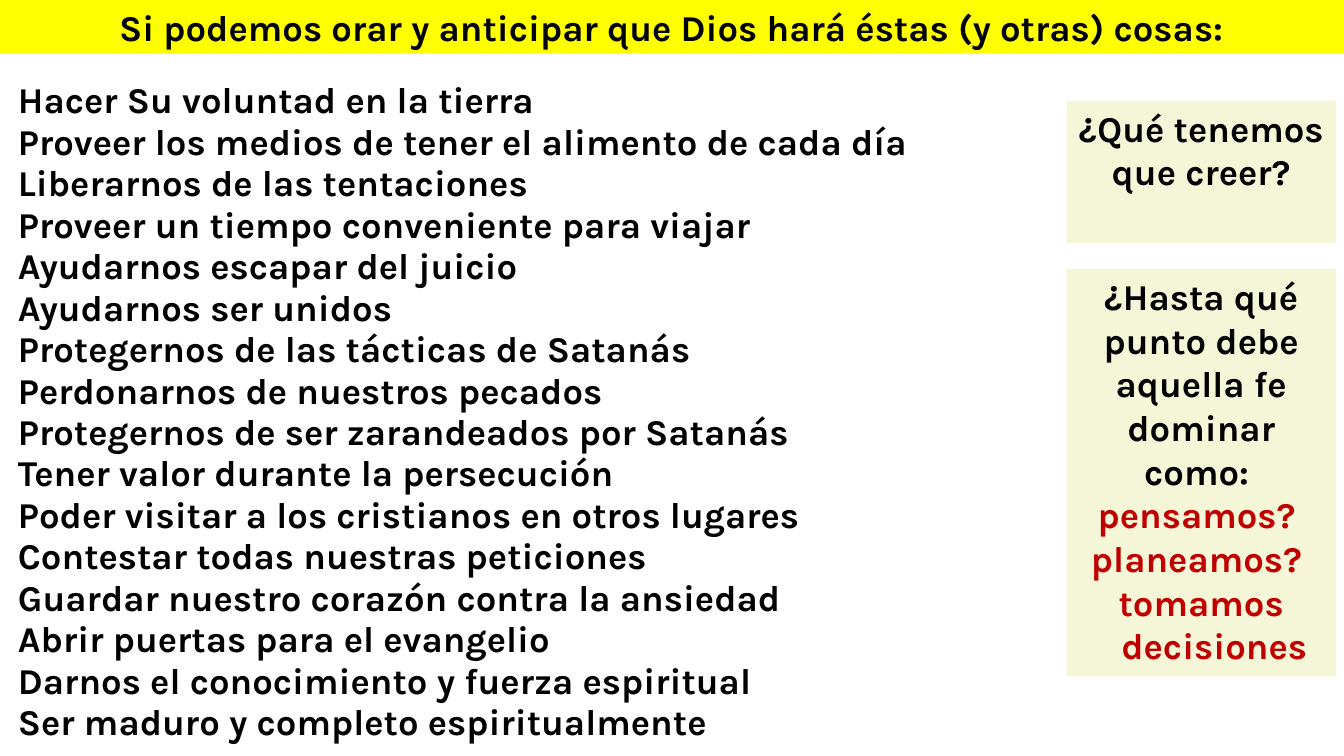
from dataclasses import dataclass
from typing import Optional

from pptx import Presentation
from pptx.dml.color import RGBColor
from pptx.enum.shapes import MSO_SHAPE
from pptx.enum.text import MSO_ANCHOR, PP_ALIGN
from pptx.util import Inches, Pt

BLACK = RGBColor(0x00, 0x00, 0x00)
RED = RGBColor(0xC0, 0x00, 0x00)
YELLOW = RGBColor(0xFF, 0xFF, 0x00)
CREAM = RGBColor(0xF5, 0xF5, 0xD7)

FONT = "Karla"
TEXT_SIZE = Pt(26)


@dataclass
class Line:
    text: str
    color: RGBColor = BLACK
    indent: float = 0


@dataclass
class Panel:
    left: float
    top: float
    width: float
    height: float
    lines: list[Line]
    fill: Optional[RGBColor] = None
    align: PP_ALIGN = PP_ALIGN.CENTER
    spacing: float = 1.0


PETITIONS = [
    "Hacer Su voluntad en la tierra",
    "Proveer los medios de tener el alimento de cada día",
    "Liberarnos de las tentaciones",
    "Proveer un tiempo conveniente para viajar",
    "Ayudarnos escapar del juicio",
    "Ayudarnos ser unidos",
    "Protegernos de las tácticas de Satanás",
    "Perdonarnos de nuestros pecados",
    "Protegernos de ser zarandeados por Satanás",
    "Tener valor durante la persecución",
    "Poder visitar a los cristianos en otros lugares",
    "Contestar todas nuestras peticiones",
    "Guardar nuestro corazón contra la ansiedad",
    "Abrir puertas para el evangelio",
    "Darnos el conocimiento y fuerza espiritual",
    "Ser maduro y completo espiritualmente",
]

PANELS = [
    Panel(0, 0, 13.33, 0.53,
          [Line("Si podemos orar y anticipar que Dios hará éstas (y otras) cosas:")],
          fill=YELLOW),
    Panel(0.08, 0.75, 10, 6.75, [Line(petition) for petition in PETITIONS],
          align=PP_ALIGN.LEFT, spacing=0.95),
    Panel(10.58, 1, 2.67, 1.41, [Line("¿Qué tenemos que creer?")], fill=CREAM),
    Panel(10.58, 2.67, 2.67, 4.04, [
        Line("¿Hasta qué punto debe aquella fe dominar como: "),
        Line("pensamos? ", RED),
        Line("planeamos? ", RED),
        Line("tomamos", RED),
        Line("decisiones", RED, indent=0.26),
    ], fill=CREAM),
]


def write_lines(frame, panel: Panel) -> None:
    frame.word_wrap = True
    frame.vertical_anchor = MSO_ANCHOR.TOP
    frame.text = "\n".join(line.text for line in panel.lines)
    for para, line in zip(frame.paragraphs, panel.lines):
        para.alignment = panel.align
        para.line_spacing = panel.spacing
        if line.indent:
            para._p.get_or_add_pPr().set("marL", str(Inches(line.indent)))
        for span in para.runs:
            span.font.name = FONT
            span.font.size = TEXT_SIZE
            span.font.bold = True
            span.font.color.rgb = line.color


def add_panel(page, panel: Panel) -> None:
    """Draw a filled rectangle, or a plain text box when there is no fill."""
    place = [Inches(length) for length in
             (panel.left, panel.top, panel.width, panel.height)]
    if panel.fill is None:
        box = page.shapes.add_textbox(*place)
    else:
        box = page.shapes.add_shape(MSO_SHAPE.RECTANGLE, *place)
        box.shadow.inherit = False
        box.fill.solid()
        box.fill.fore_color.rgb = panel.fill
        box.line.fill.background()
    write_lines(box.text_frame, panel)


def main() -> None:
    deck = Presentation()
    deck.slide_width = Inches(13.33)
    deck.slide_height = Inches(7.5)
    page = deck.slides.add_slide(deck.slide_layouts[6])
    for panel in PANELS:
        add_panel(page, panel)
    deck.save("out.pptx")


if __name__ == "__main__":
    main()
